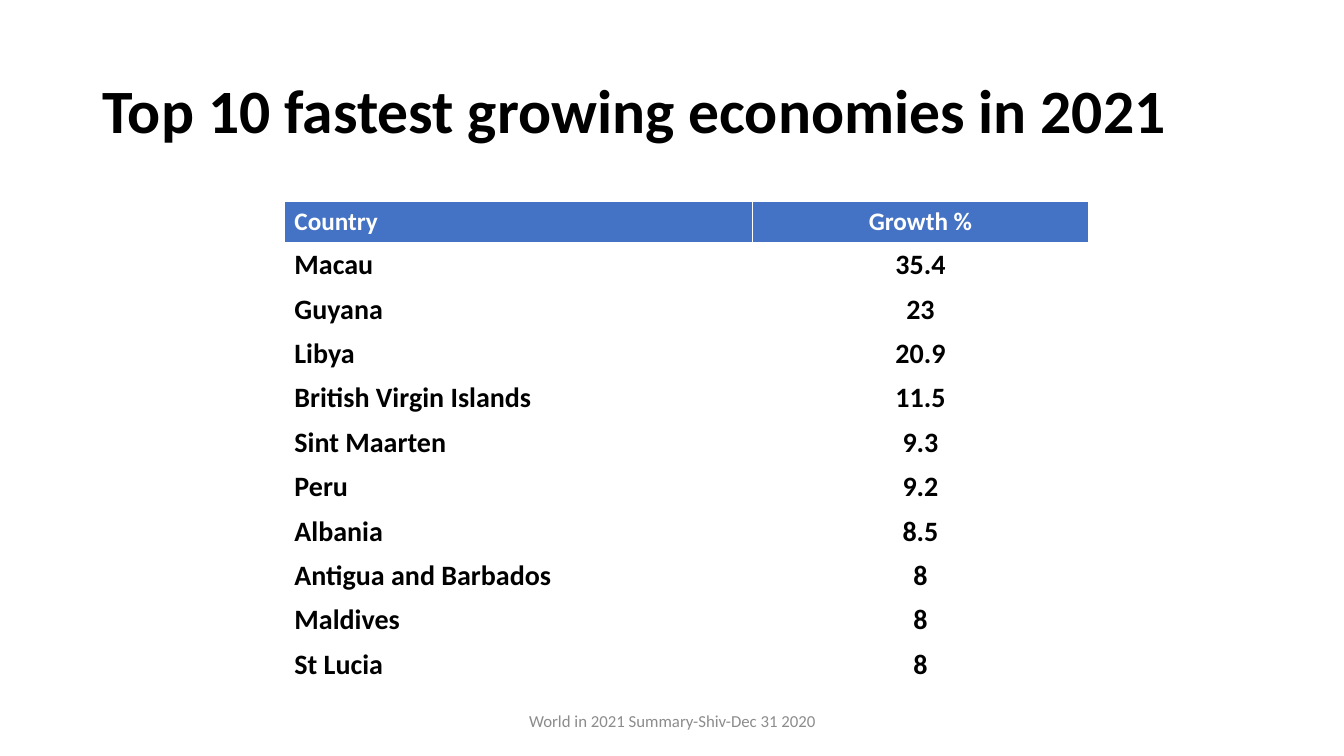
from typing import NamedTuple

from pptx import Presentation
from pptx.dml.color import RGBColor
from pptx.enum.text import MSO_ANCHOR, PP_ALIGN
from pptx.util import Inches, Pt

LEFT, CENTER = PP_ALIGN.LEFT, PP_ALIGN.CENTER
MIDDLE = MSO_ANCHOR.MIDDLE
FONT = "Calibri"
COLORS = {"text": "000000", "white": "FFFFFF", "header": "4472C4", "footer": "8C8C8C"}


class Economy(NamedTuple):
    country: str
    growth: str


HEADER = Economy("Country", "Growth %")
ECONOMIES = [
    Economy("Macau", "35.4"),
    Economy("Guyana", "23"),
    Economy("Libya", "20.9"),
    Economy("British Virgin Islands", "11.5"),
    Economy("Sint Maarten", "9.3"),
    Economy("Peru", "9.2"),
    Economy("Albania", "8.5"),
    Economy("Antigua and Barbados", "8"),
    Economy("Maldives", "8"),
    Economy("St Lucia", "8"),
]
COLUMN_WIDTHS = (4.64, 3.34)
COLUMN_ALIGNS = (LEFT, CENTER)
ROW_HEIGHT = 0.41


def set_text(tf, text: str, size: float, color: str, align, bold: bool = True) -> None:
    tf.text = text
    p = tf.paragraphs[0]
    p.alignment = align
    font = p.runs[0].font
    font.name, font.size, font.bold = FONT, Pt(size), bold
    font.color.rgb = RGBColor.from_string(COLORS[color])


def fill_row(table, index: int, economy: Economy, size: float, color: str, fill: str) -> None:
    table.rows[index].height = Inches(ROW_HEIGHT)
    for cell, text, align in zip(table.rows[index].cells, economy, COLUMN_ALIGNS):
        set_text(cell.text_frame, text, size, color, align)
        cell.fill.solid()
        cell.fill.fore_color.rgb = RGBColor.from_string(COLORS[fill])


def main() -> None:
    prs = Presentation()
    prs.slide_width, prs.slide_height = Inches(13.33), Inches(7.5)
    s = prs.slides.add_slide(prs.slide_layouts[5])

    # Title
    title = s.shapes.title
    title.left, title.top = Inches(0.92), Inches(0.4)
    title.width, title.height = Inches(11.5), Inches(1.45)
    title.text_frame.vertical_anchor = MIDDLE
    set_text(title.text_frame, "Top 10 fastest growing economies in 2021", 44, "text", LEFT)
    title.text_frame.paragraphs[0].line_spacing = 0.9

    # Growth table
    row_count = len(ECONOMIES) + 1
    table = s.shapes.add_table(
        row_count, len(COLUMN_WIDTHS), Inches(2.82), Inches(2),
        Inches(sum(COLUMN_WIDTHS)), Inches(ROW_HEIGHT * row_count),
    ).table
    table.horz_banding = False
    for column, width in zip(table.columns, COLUMN_WIDTHS):
        column.width = Inches(width)
    fill_row(table, 0, HEADER, 18, "white", "header")
    for i, economy in enumerate(ECONOMIES, start=1):
        fill_row(table, i, economy, 20, "text", "white")

    # Footer
    footer = s.shapes.add_textbox(Inches(4.42), Inches(6.95), Inches(4.5), Inches(0.4))
    tf = footer.text_frame
    tf.word_wrap = True
    tf.vertical_anchor = MIDDLE
    set_text(tf, "World in 2021 Summary-Shiv-Dec 31 2020", 12, "footer", CENTER, bold=False)

    prs.save("out.pptx")


if __name__ == "__main__":
    main()
